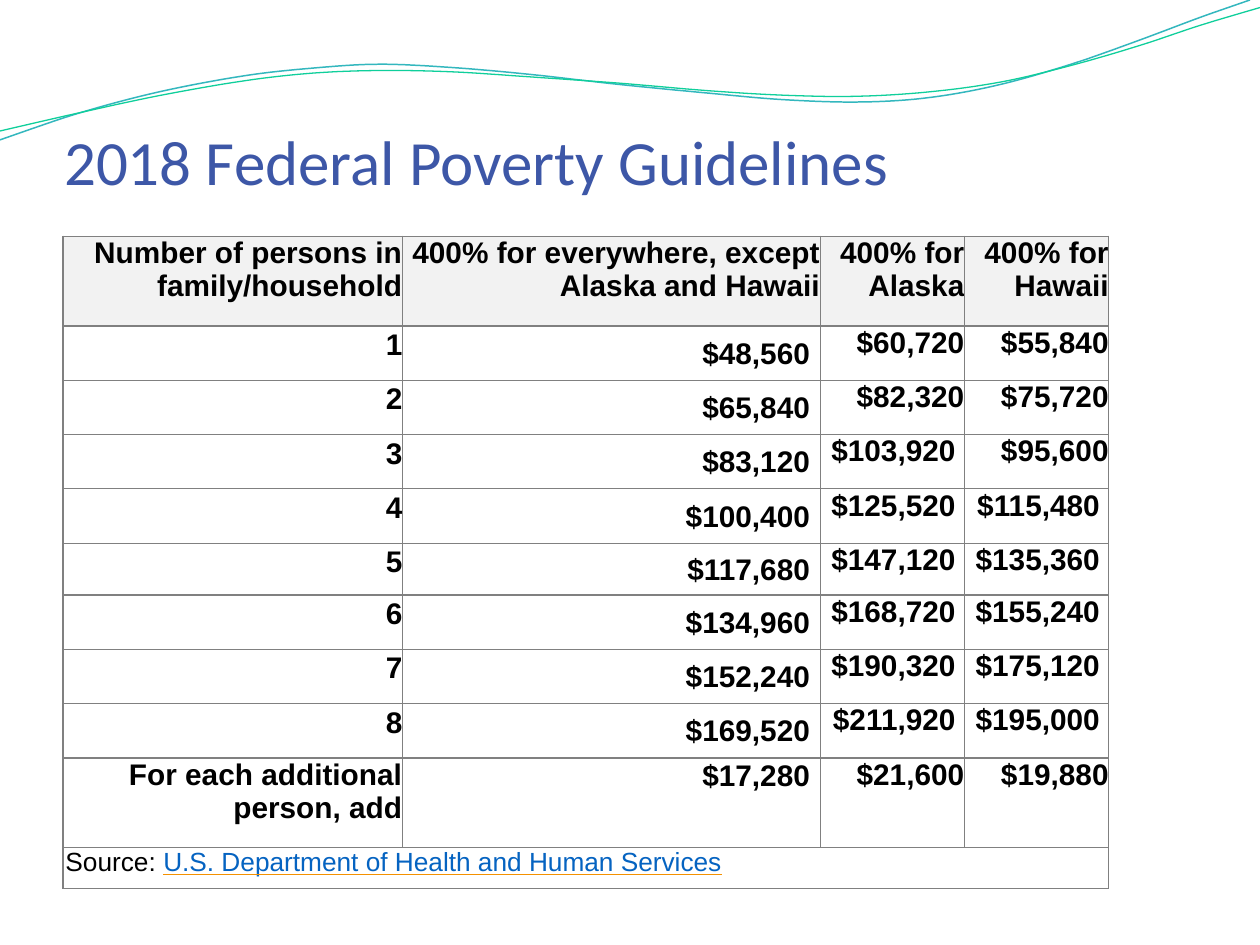
from dataclasses import dataclass

from lxml.etree import SubElement
from pptx import Presentation
from pptx.dml.color import RGBColor
from pptx.enum.text import MSO_ANCHOR as Anchor, PP_ALIGN as Align
from pptx.oxml.ns import qn
from pptx.util import Inches, Pt


@dataclass(frozen=True)
class Theme:
    title_font: str = "Calibri"
    body_font: str = "Arial"
    title_size: float = 36
    table_size: float = 17
    source_size: float = 15
    title: str = "3D57A7"
    text: str = "000000"
    link: str = "0563C1"
    link_underline: str = "F49100"
    header_fill: str = "F2F2F2"
    border: str = "808080"
    border_width: float = 0.75
    waves: tuple = (("33B7BE", 0.85), ("0FCF9B", 0.75))


@dataclass(frozen=True)
class Box:
    left: int
    top: int
    width: int
    height: int

    def region(self, left, top, width, height):
        """Sub-box given as shares of this box."""
        return Box(int(self.left + left * self.width), int(self.top + top * self.height),
                   int(width * self.width), int(height * self.height))

    def bounds(self):
        return self.left, self.top, self.width, self.height


THEME = Theme()

# Crests and slopes of each wave, as percent of slide width and of band height.
WAVE_KNOTS = (
    ((0, 111), (6.2, 90), (12.6, 73), (19.5, 60), (24.9, 54), (30, 51), (35.7, 53.5),
     (42, 59), (49.1, 67), (56.3, 74), (62, 79), (67.9, 81), (73.3, 78), (79, 68),
     (85, 51), (90.4, 32), (95.2, 14), (99.2, 0)),
    ((0, 104), (6.1, 90), (12.6, 76), (19.5, 64), (24.9, 58), (30.2, 56), (35.8, 57),
     (42, 61), (49.1, 66), (56.2, 72), (62, 75.5), (67.8, 76.5), (73.7, 73), (79.5, 65),
     (85, 52), (90.5, 36), (95.3, 20), (100, 6)),
)
HEADERS = ("Number of persons in\nfamily/household",
           "400% for everywhere, except\nAlaska and Hawaii",
           "400% for\nAlaska", "400% for\nHawaii")
GUIDELINES = (
    ("1", "$48,560", "$60,720", "$55,840"),
    ("2", "$65,840", "$82,320", "$75,720"),
    ("3", "$83,120", "$103,920", "$95,600"),
    ("4", "$100,400", "$125,520", "$115,480"),
    ("5", "$117,680", "$147,120", "$135,360"),
    ("6", "$134,960", "$168,720", "$155,240"),
    ("7", "$152,240", "$190,320", "$175,120"),
    ("8", "$169,520", "$211,920", "$195,000"),
    ("For each additional\nperson, add", "$17,280", "$21,600", "$19,880"),
)
COLUMN_SHARES = (2.68, 3.30, 1.14, 1.14)
ROW_SHARES = (0.71, 0.43, 0.43, 0.43, 0.43, 0.41, 0.43, 0.43, 0.43, 0.71, 0.32)


def rgb(code):
    return RGBColor.from_string(code)


def format_font(font, name, size, color, bold=False):
    font.size, font.bold = Pt(size), bold
    font.color.rgb = rgb(color)
    font.name = name


def smooth_points(knots, steps=8):
    """Points of a Hermite curve whose slopes come from neighbouring knots."""
    last = len(knots) - 1
    slopes = []
    for i in range(last + 1):
        (x0, y0), (x1, y1) = knots[max(i - 1, 0)], knots[min(i + 1, last)]
        slopes.append((y1 - y0) / (x1 - x0))
    points = [knots[0]]
    for i in range(last):
        (x0, y0), (x1, y1) = knots[i], knots[i + 1]
        span = x1 - x0
        for step in range(1, steps + 1):
            t = step / steps
            y = ((2 * t**3 - 3 * t**2 + 1) * y0 + (t**3 - 2 * t**2 + t) * span * slopes[i]
                 + (3 * t**2 - 2 * t**3) * y1 + (t**3 - t**2) * span * slopes[i + 1])
            points.append((x0 + t * span, y))
    return points


def draw_waves(slide, box):
    for knots, (color, width) in zip(WAVE_KNOTS, THEME.waves):
        points = [(round(box.left + x / 100 * box.width), round(box.top + y / 100 * box.height))
                  for x, y in smooth_points(knots)]
        builder = slide.shapes.build_freeform(*points[0])
        builder.add_line_segments(points[1:], close=False)
        wave = builder.convert_to_shape()
        wave.fill.background()
        wave.line.color.rgb = rgb(color)
        wave.line.width = Pt(width)
        wave.shadow.inherit = False


def place_title(slide, box):
    title = slide.shapes.title
    title.left, title.top, title.width, title.height = box.bounds()
    frame = title.text_frame
    frame.text = "2018 Federal Poverty Guidelines"
    frame.margin_left = Inches(0.01)
    frame.margin_right = frame.margin_top = frame.margin_bottom = 0
    frame.vertical_anchor = Anchor.MIDDLE
    frame.paragraphs[0].alignment = Align.LEFT
    format_font(frame.paragraphs[0].runs[0].font, THEME.title_font, THEME.title_size, THEME.title)


def style_cell(cell, fill=None):
    properties = cell._tc.get_or_add_tcPr()
    for side in ("a:lnL", "a:lnR", "a:lnT", "a:lnB"):
        line = SubElement(properties, qn(side), w=str(Pt(THEME.border_width)))
        SubElement(SubElement(line, qn("a:solidFill")), qn("a:srgbClr"), val=THEME.border)
    if fill:
        cell.fill.solid()
        cell.fill.fore_color.rgb = rgb(fill)
    else:
        cell.fill.background()
    cell.margin_left = cell.margin_right = cell.margin_top = cell.margin_bottom = 0


def fill_cell(cell, text):
    cell.text_frame.text = text
    for paragraph in cell.text_frame.paragraphs:
        paragraph.alignment = Align.RIGHT
        format_font(paragraph.runs[0].font, THEME.body_font, THEME.table_size, THEME.text, True)


def fill_source(cell):
    cell.margin_left = Inches(0.02)
    paragraph = cell.text_frame.paragraphs[0]
    label, agency = paragraph.add_run(), paragraph.add_run()
    label.text, agency.text = "Source: ", "U.S. Department of Health and Human Services"
    agency.font.underline = True
    agency.font.color.rgb = rgb(THEME.link)
    underline = SubElement(SubElement(agency.font._element, qn("a:uFill")), qn("a:solidFill"))
    SubElement(underline, qn("a:srgbClr"), val=THEME.link_underline)
    for run, color in ((label, THEME.text), (agency, THEME.link)):
        format_font(run.font, THEME.body_font, THEME.source_size, color)


def place_guidelines(slide, box):
    row_count, column_count = len(ROW_SHARES), len(COLUMN_SHARES)
    table = slide.shapes.add_table(row_count, column_count, *box.bounds()).table
    table.first_row = table.horz_banding = False
    for column, share in zip(table.columns, COLUMN_SHARES):
        column.width = int(box.width * share / sum(COLUMN_SHARES))
    for row, share in zip(table.rows, ROW_SHARES):
        row.height = int(box.height * share / sum(ROW_SHARES))
    for r in range(row_count):
        for c in range(column_count):
            style_cell(table.cell(r, c), THEME.header_fill if r == 0 else None)

    for r, texts in enumerate((HEADERS, *GUIDELINES)):
        for c, text in enumerate(texts):
            cell = table.cell(r, c)
            fill_cell(cell, text)
            if c == 0 and 0 < r < len(GUIDELINES):
                cell.margin_top = Inches(0.02)
            elif c == 1 and r > 0:
                cell.margin_right, cell.margin_top = Inches(0.08), Inches(0.01)
                if r < len(GUIDELINES):
                    cell.vertical_anchor = Anchor.MIDDLE
            elif r > 0 and len(text) == len("$100,000"):
                cell.margin_right = Inches(0.07)

    source = table.cell(row_count - 1, 0)
    source.merge(table.cell(row_count - 1, column_count - 1))
    fill_source(source)


def main():
    deck = Presentation()
    deck.slide_width, deck.slide_height = Inches(10), Inches(7.5)
    slide = deck.slides.add_slide(deck.slide_layouts[5])
    page = Box(0, 0, deck.slide_width, deck.slide_height)
    draw_waves(slide, page.region(0, 0, 1, 2 / 15))
    place_title(slide, page.region(0.05, 0.13, 0.66, 0.08))
    place_guidelines(slide, page.region(0.05, 0.25, 0.83, 0.69))
    deck.save("out.pptx")


if __name__ == "__main__":
    main()
